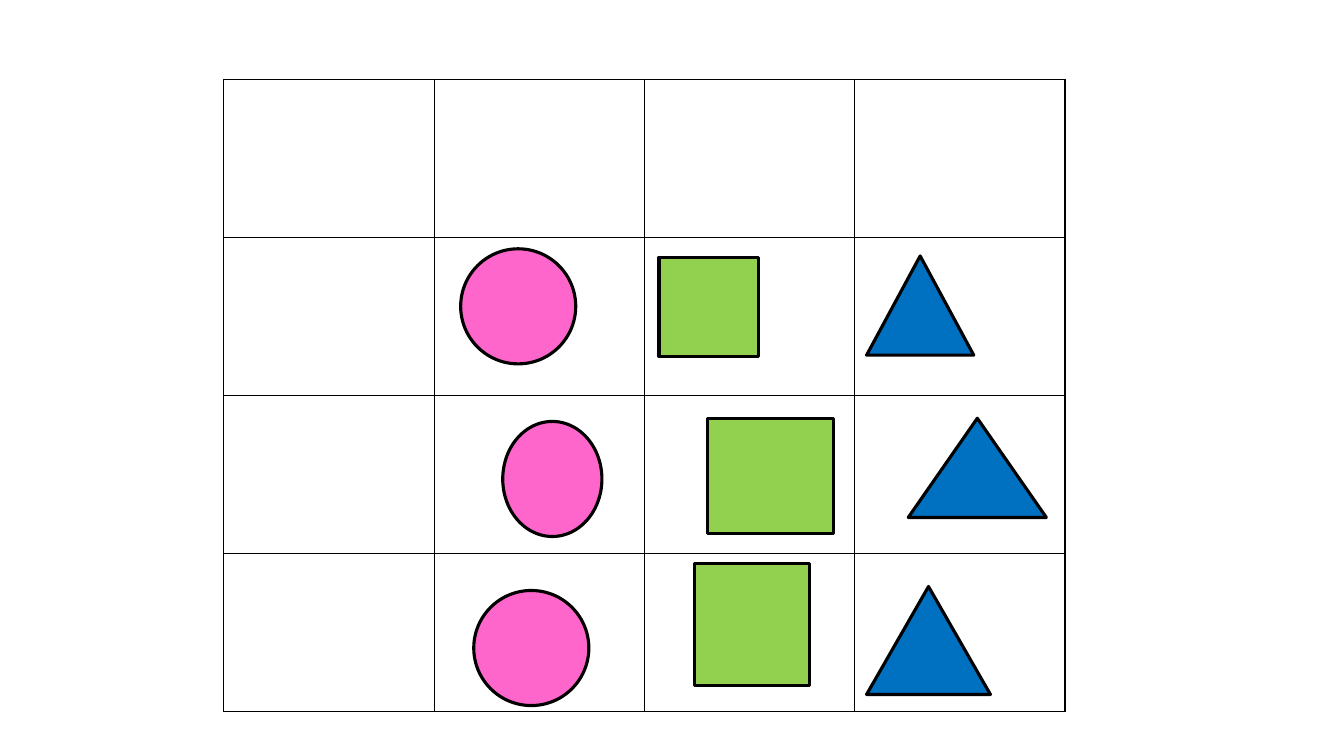
from pptx import Presentation
from pptx.dml.color import RGBColor
from pptx.enum.shapes import MSO_SHAPE as Shape
from pptx.oxml import parse_xml
from pptx.oxml.ns import nsdecls
from pptx.util import Cm, Pt

BLACK, PINK, GREEN, BLUE = "000000", "FF66CC", "92D050", "0070C0"

# One table column per kind; each figure is left, top, width, height in cm.
FIGURES = [
    (Shape.OVAL, PINK, [(11.61, 6.27, 2.9, 2.9),
                        (12.67, 10.62, 2.5, 2.9),
                        (11.94, 14.88, 2.9, 2.9)]),
    (Shape.RECTANGLE, GREEN, [(16.61, 6.48, 2.5, 2.5),
                              (17.83, 10.54, 3.18, 2.9),
                              (17.5, 14.2, 2.9, 3.07)]),
    (Shape.ISOSCELES_TRIANGLE, BLUE, [(21.84, 6.45, 2.7, 2.5),
                                      (22.89, 10.54, 3.48, 2.5),
                                      (21.84, 14.78, 3.12, 2.72)]),
]


def color(value):
    return RGBColor.from_string(value)


class ShapeSlide:
    """Holds the line style and the slide being drawn."""

    line_color = BLACK
    border_width = Pt(1)
    outline_width = Pt(2.25)

    def __init__(self, deck):
        self.slide = deck.slides.add_slide(deck.slide_layouts[6])

    def grid(self, left, top, rows, columns, column_width, row_height):
        frame = self.slide.shapes.add_table(
            rows, columns, Cm(left), Cm(top),
            Cm(columns * column_width), Cm(rows * row_height))
        table = frame.table
        table.first_row = table.horz_banding = False
        for column in table.columns:
            column.width = Cm(column_width)
        for row in table.rows:
            row.height = Cm(row_height)
        for cell in table.iter_cells():
            cell.fill.background()
            self.add_borders(cell)

    def add_borders(self, cell):
        """Line all four sides; borders must precede the fill in the XML."""
        properties = cell._tc.get_or_add_tcPr()
        for index, side in enumerate("LRTB"):
            properties.insert(index, parse_xml(
                f'<a:ln{side} {nsdecls("a")} w="{self.border_width}">'
                f'<a:solidFill><a:srgbClr val="{self.line_color}"/></a:solidFill>'
                f'</a:ln{side}>'))

    def figure(self, kind, fill, left, top, width, height):
        shape = self.slide.shapes.add_shape(
            kind, Cm(left), Cm(top), Cm(width), Cm(height))
        shape.shadow.inherit = False
        shape.fill.solid()
        shape.fill.fore_color.rgb = color(fill)
        shape.line.color.rgb = color(self.line_color)
        shape.line.width = self.outline_width


def main():
    deck = Presentation()
    deck.slide_width, deck.slide_height = Cm(33.87), Cm(19.05)
    page = ShapeSlide(deck)
    page.grid(5.64, 2, rows=4, columns=4, column_width=5.3, row_height=3.98)
    for kind, fill, places in FIGURES:
        for place in places:
            page.figure(kind, fill, *place)
    deck.save("out.pptx")


if __name__ == "__main__":
    main()
